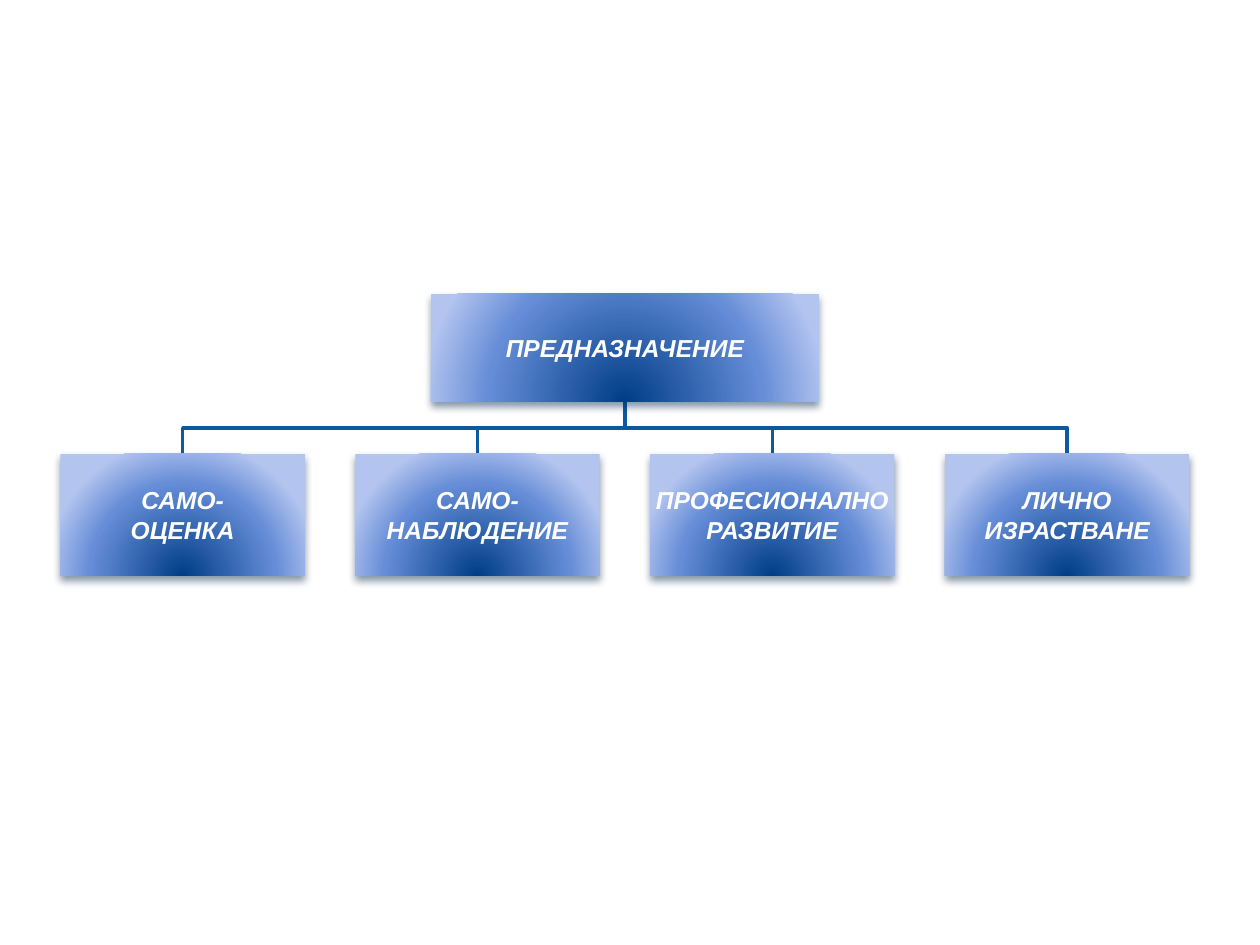
from lxml.etree import SubElement
from pptx import Presentation
from pptx.dml.color import RGBColor
from pptx.enum.shapes import MSO_SHAPE
from pptx.enum.text import MSO_ANCHOR, PP_ALIGN
from pptx.oxml.ns import qn
from pptx.util import Inches, Pt

WHITE = RGBColor(0xFF, 0xFF, 0xFF)
LINK_BLUE = RGBColor(0x0C, 0x59, 0x9F)
SHADOW_NAVY = RGBColor(0x04, 0x27, 0x47)
GLOW = [
    (0, RGBColor(0x00, 0x3D, 0x87)),
    (68, RGBColor(0x66, 0x8D, 0xD7)),
    (100, RGBColor(0xB3, 0xC4, 0xEF)),
]

PURPOSE = ["ПРЕДНАЗНАЧЕНИЕ"]
GOALS = [
    ["САМО-", "ОЦЕНКА"],
    ["САМО-", "НАБЛЮДЕНИЕ"],
    ["ПРОФЕСИОНАЛНО", "РАЗВИТИЕ"],
    ["ЛИЧНО", "ИЗРАСТВАНЕ"],
]

# Chart grid, in inches
CENTER = 4.96
PURPOSE_TOP, PURPOSE_WIDTH, PURPOSE_HEIGHT = 2.33, 3.08, 0.86
PURPOSE_BOTTOM = PURPOSE_TOP + PURPOSE_HEIGHT
GOAL_TOP, GOAL_WIDTH, GOAL_HEIGHT = 3.6, 1.94, 0.97
GOAL_PITCH = 2.34
BUS_Y = (PURPOSE_BOTTOM + GOAL_TOP) / 2

FRAME_FORMAT = {
    "word_wrap": True,
    "vertical_anchor": MSO_ANCHOR.MIDDLE,
    "margin_left": Inches(0.01),
    "margin_right": Inches(0.01),
    "margin_top": Inches(0.01),
    "margin_bottom": Inches(0.01),
}
FONT_FORMAT = {"name": "Arial", "size": Pt(14), "bold": True, "italic": True}


def apply_format(target, values):
    for name, value in values.items():
        setattr(target, name, value)


def add_color(parent, color):
    return SubElement(parent, qn("a:srgbClr"), val=str(color))


def fill_with_glow(shape):
    """Circular gradient that spreads from below the box."""
    shape.fill.gradient()
    gradient = shape.element.spPr.find(qn("a:gradFill"))
    for child in list(gradient):
        gradient.remove(child)
    stops = SubElement(gradient, qn("a:gsLst"))
    for percent, color in GLOW:
        add_color(SubElement(stops, qn("a:gs"), pos=str(percent * 1000)), color)
    circle = SubElement(gradient, qn("a:path"), {"path": "circle"})
    SubElement(circle, qn("a:fillToRect"), l="50000", t="130000", r="50000", b="-30000")


def add_soft_shadow(shape):
    shape.shadow.inherit = False
    effects = shape.element.spPr.find(qn("a:effectLst"))
    shadow = SubElement(effects, qn("a:outerShdw"), blurRad=str(Pt(4.5)),
                        dist=str(Pt(3)), dir="5400000", rotWithShape="0")
    SubElement(add_color(shadow, SHADOW_NAVY), qn("a:alpha"), val="48000")


def add_box(slide, middle, top, width, height, lines):
    box = slide.shapes.add_shape(
        MSO_SHAPE.RECTANGLE, *map(Inches, (middle - width / 2, top, width, height)))
    fill_with_glow(box)
    box.line.fill.background()
    add_soft_shadow(box)
    frame = box.text_frame
    apply_format(frame, FRAME_FORMAT)
    for index, line in enumerate(lines):
        paragraph = frame.add_paragraph() if index else frame.paragraphs[0]
        paragraph.text = line
        paragraph.alignment = PP_ALIGN.CENTER
        apply_format(paragraph.font, FONT_FORMAT)
        paragraph.font.color.rgb = WHITE


def add_branch(slide, middle):
    """Open stepped line from the purpose down to one goal."""
    steps = [(CENTER, BUS_Y), (middle, BUS_Y), (middle, GOAL_TOP)]
    outline = slide.shapes.build_freeform(Inches(CENTER), Inches(PURPOSE_BOTTOM))
    outline.add_line_segments([(Inches(x), Inches(y)) for x, y in steps], close=False)
    branch = outline.convert_to_shape()
    branch.fill.background()
    branch.line.color.rgb = LINK_BLUE
    branch.line.width = Pt(2)
    branch.shadow.inherit = False


def main():
    deck = Presentation()
    deck.slide_width, deck.slide_height = Inches(10), Inches(7.5)
    slide = deck.slides.add_slide(deck.slide_layouts[6])
    goal_middles = [CENTER + (column - (len(GOALS) - 1) / 2) * GOAL_PITCH
                    for column in range(len(GOALS))]

    # Branches, behind the boxes
    for middle in reversed(goal_middles):
        add_branch(slide, middle)

    # Purpose
    add_box(slide, CENTER, PURPOSE_TOP, PURPOSE_WIDTH, PURPOSE_HEIGHT, PURPOSE)

    # Goals
    for middle, lines in zip(goal_middles, GOALS):
        add_box(slide, middle, GOAL_TOP, GOAL_WIDTH, GOAL_HEIGHT, lines)

    deck.save("out.pptx")


if __name__ == "__main__":
    main()
